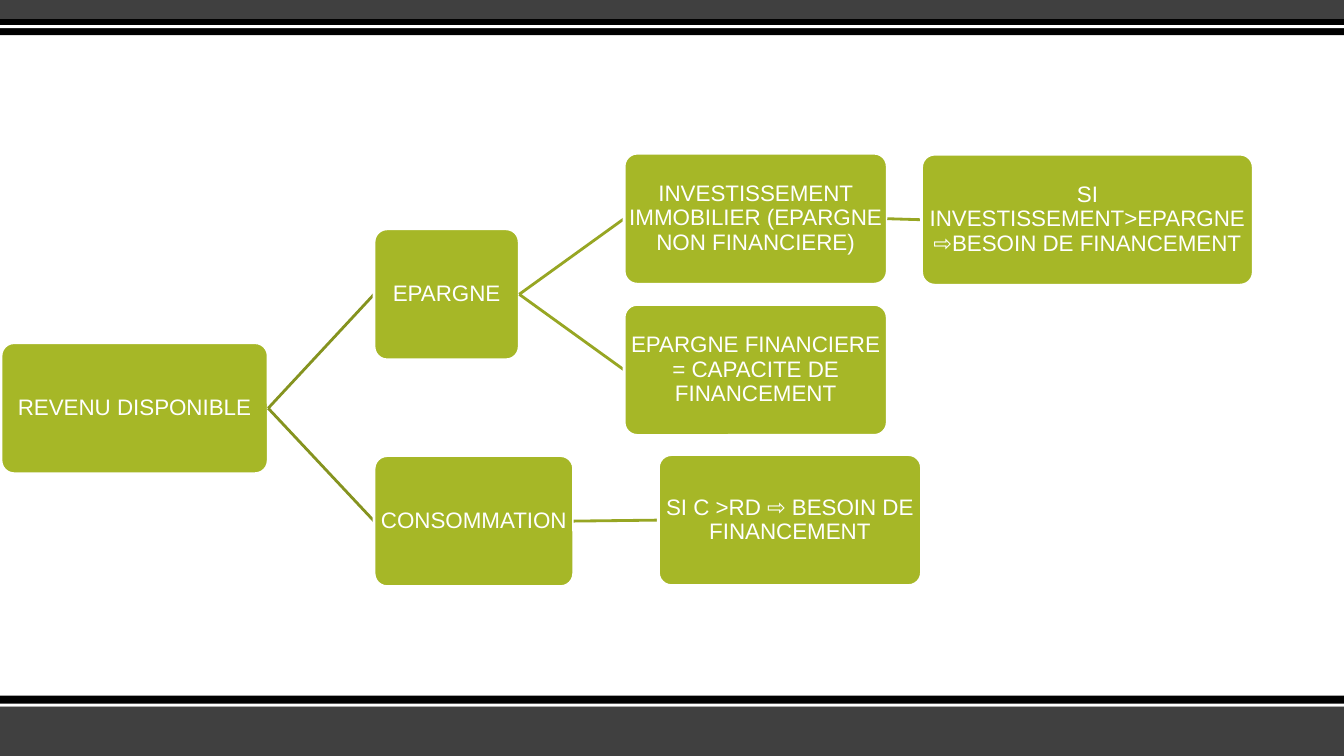
from dataclasses import dataclass
from typing import Optional

from lxml import etree
from pptx import Presentation
from pptx.dml.color import RGBColor
from pptx.enum import shapes, text
from pptx.oxml import ns
from pptx.util import Inches, Pt

WHITE = RGBColor(0xFF, 0xFF, 0xFF)
BLACK = RGBColor(0x00, 0x00, 0x00)
GREY = RGBColor(0x40, 0x40, 0x40)
GREEN = RGBColor(0xA6, 0xB7, 0x27)
DARK_GREEN = RGBColor(0x85, 0x93, 0x1F)
MID_GREEN = RGBColor(0x97, 0xA6, 0x23)

SLIDE_WIDTH = 13.33
NODE_HEIGHT = 1.3
LEFT_SITE, RIGHT_SITE = 1, 3


@dataclass(frozen=True)
class Band:
    top: float
    height: float
    color: RGBColor


@dataclass(frozen=True)
class Node:
    label: str
    left: float
    top: float
    width: float
    parent: Optional[str] = None
    link_color: RGBColor = MID_GREEN


BANDS = [
    Band(7, 0.5, GREY),
    Band(6.9, 0.11, BLACK),
    Band(6.98, 0.03, WHITE),
    Band(0, 0.19, GREY),
    Band(0.19, 0.16, BLACK),
    Band(0.25, 0.03, WHITE),
]

INCOME = "REVENU DISPONIBLE"
SAVING = "EPARGNE"
SPENDING = "CONSOMMATION"
PROPERTY = "INVESTISSEMENT IMMOBILIER (EPARGNE NON FINANCIERE)"

# Each parent comes before its children.
NODES = [
    Node(INCOME, 0.01, 3.4, 2.65),
    Node(SAVING, 3.71, 2.27, 1.44, INCOME, DARK_GREEN),
    Node(PROPERTY, 6.19, 1.52, 2.61, SAVING),
    Node("SI INVESTISSEMENT>EPARGNE ⇨BESOIN DE FINANCEMENT", 9.14, 1.53, 3.29, PROPERTY),
    Node("EPARGNE FINANCIERE = CAPACITE DE FINANCEMENT", 6.19, 3.02, 2.61, SAVING),
    Node(SPENDING, 3.71, 4.52, 1.98, INCOME, DARK_GREEN),
    Node("SI C >RD ⇨ BESOIN DE FINANCEMENT", 6.53, 4.51, 2.61, SPENDING),
]


def add_band(page, band: Band) -> None:
    bar = page.shapes.add_shape(
        shapes.MSO_SHAPE.RECTANGLE,
        0, Inches(band.top), Inches(SLIDE_WIDTH), Inches(band.height),
    )
    bar.shadow.inherit = False
    bar.fill.solid()
    bar.fill.fore_color.rgb = band.color
    bar.line.fill.background()


def add_node(page, node: Node):
    box = page.shapes.add_shape(
        shapes.MSO_SHAPE.ROUNDED_RECTANGLE,
        Inches(node.left), Inches(node.top), Inches(node.width), Inches(NODE_HEIGHT),
    )
    box.adjustments[0] = 0.1
    box.shadow.inherit = False
    box.fill.solid()
    box.fill.fore_color.rgb = GREEN
    box.line.color.rgb = WHITE
    box.line.width = Pt(2)

    frame = box.text_frame
    frame.word_wrap = True
    frame.vertical_anchor = text.MSO_ANCHOR.MIDDLE
    frame.margin_left = frame.margin_right = 0
    frame.margin_top = frame.margin_bottom = Inches(0.01)
    para = frame.paragraphs[0]
    para.text = node.label
    para.alignment = text.PP_ALIGN.CENTER
    para.line_spacing = 0.9
    para.font.name = "Arial"
    para.font.size = Pt(16)
    para.font.color.rgb = WHITE
    return box


def add_link(page, parent, child, color: RGBColor) -> None:
    """Join the parent's right side to the child's left side, below the child."""
    link = page.shapes.add_connector(shapes.MSO_CONNECTOR.STRAIGHT, 0, 0, 0, 0)
    link.begin_connect(parent, RIGHT_SITE)
    link.end_connect(child, LEFT_SITE)
    link.line.color.rgb = color
    link.line.width = Pt(2)
    etree.SubElement(link.element.spPr, ns.qn("a:effectLst"))
    child.element.addprevious(link.element)


def main() -> None:
    deck = Presentation()
    deck.slide_width = Inches(SLIDE_WIDTH)
    deck.slide_height = Inches(7.5)
    page = deck.slides.add_slide(deck.slide_layouts[6])

    for band in BANDS:
        add_band(page, band)

    boxes = {}
    for node in NODES:
        box = boxes[node.label] = add_node(page, node)
        if node.parent:
            add_link(page, boxes[node.parent], box, node.link_color)

    deck.save("out.pptx")


if __name__ == "__main__":
    main()
